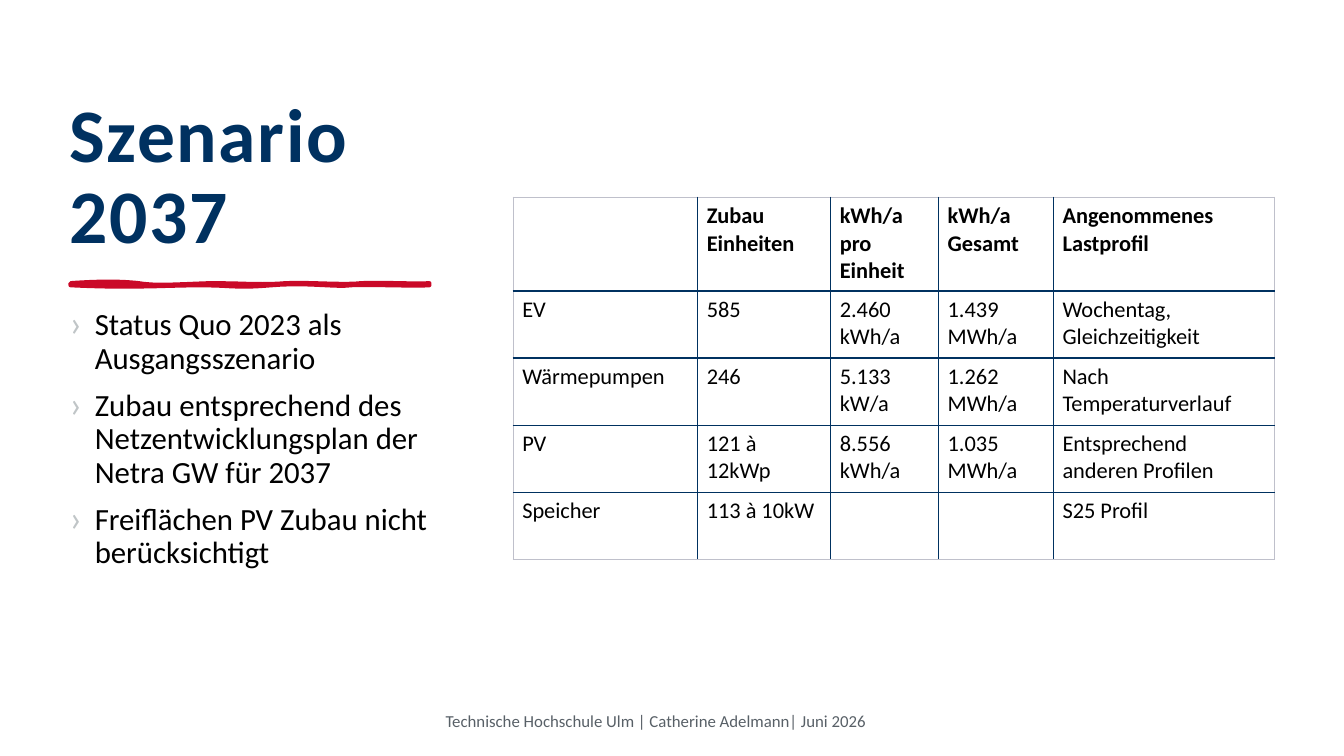
from dataclasses import dataclass

from lxml.etree import SubElement
from pptx import Presentation
from pptx.dml.color import RGBColor
from pptx.enum.text import MSO_ANCHOR, MSO_AUTO_SIZE, PP_ALIGN
from pptx.oxml.ns import qn
from pptx.util import Inches, Pt

WIDE, HIGH = Inches(13.33), Inches(7.5)
FONT = "Calibri"
COLORS = {
    "navy": "003160",
    "red": "CA0928",
    "black": "000000",
    "gray": "586067",
    "pale": "C0C5C7",
    "frame": "BFC0CB",
}


@dataclass(frozen=True)
class Box:
    left: float
    top: float
    width: float
    height: float

    def place(self) -> tuple[int, int, int, int]:
        return across(self.left), down(self.top), across(self.width), down(self.height)


@dataclass(frozen=True)
class Style:
    size: int
    color: str
    bold: bool = False


@dataclass(frozen=True)
class Curve:
    first: tuple[int, int]
    second: tuple[int, int]
    end: tuple[int, int]

    def point(self, start: tuple[int, int], t: float) -> tuple[float, float]:
        u = 1 - t
        x, y = (
            u**3 * a + 3 * u * u * t * b + 3 * u * t * t * c + t**3 * d
            for a, b, c, d in zip(start, self.first, self.second, self.end)
        )
        return x, y


TITLE = Style(54, "navy", True)
BODY = Style(22, "black")
FOOT = Style(12, "gray")
HEAD = Style(16, "black", True)
CELL = Style(16, "black")

TITLE_BOX = Box(5.18, 9.33, 28.13, 25.07)
STROKE_BOX = Box(5.25, 37.47, 26.7, 0.27)
BODY_BOX = Box(5.18, 40.93, 28.13, 49.73)
FOOT_BOX = Box(33.15, 92.67, 33.75, 5.33)
TABLE_BOX = Box(38.18, 26.1, 56.63, 47.87)

STROKE = [
    Curve((8, -100), (14, -100), (19, 0)),
    Curve((24, 150), (30, 50), (39, 0)),
    Curve((48, 0), (53, 100), (60, 0)),
    Curve((67, -50), (76, 100), (81, 0)),
    Curve((87, -50), (96, 50), (100, 0)),
    Curve((100, 50), (100, 100), (100, 100)),
    Curve((95, 150), (83, 50), (78, 100)),
    Curve((74, 200), (66, -50), (56, 100)),
    Curve((46, 250), (45, 100), (36, 100)),
    Curve((27, 100), (17, 250), (0, 100)),
]
STEPS = 12

POINTS = [
    "Status Quo 2023 als Ausgangsszenario",
    "Zubau entsprechend des Netzentwicklungsplan der Netra GW für 2037",
    "Freiflächen PV Zubau nicht berücksichtigt",
]
COLS = [13.73, 9.9, 8.03, 8.55, 16.42]
ROWS = [12.4] + [8.87] * 4
DATA = [
    ["", "Zubau\nEinheiten", "kWh/a\npro Einheit", "kWh/a\nGesamt", "Angenommenes Lastprofil"],
    ["EV", "585", "2.460 kWh/a", "1.439 MWh/a", "Wochentag, Gleichzeitigkeit"],
    ["Wärmepumpen", "246", "5.133 kW/a", "1.262 MWh/a", "Nach Temperaturverlauf"],
    ["PV", "121 à 12kWp", "8.556 kWh/a", "1.035 MWh/a", "Entsprechend anderen Profilen"],
    ["Speicher", "113 à 10kW", "", "", "S25 Profil"],
]


def across(share: float) -> int:
    return round(WIDE * share / 100)


def down(share: float) -> int:
    return round(HIGH * share / 100)


def tint(name: str) -> RGBColor:
    return RGBColor.from_string(COLORS[name])


def write(para, text: str, style: Style):
    run = para.add_run()
    run.text = text
    run.font.name = FONT
    run.font.size = Pt(style.size)
    run.font.bold = style.bold
    run.font.color.rgb = tint(style.color)
    return run


def fill_text(frame, lines: list[str], style: Style) -> None:
    for i, line in enumerate(lines):
        para = frame.add_paragraph() if i else frame.paragraphs[0]
        write(para, line, style)


def set_frame(frame, anchor: MSO_ANCHOR) -> None:
    frame.word_wrap = True
    frame.auto_size = MSO_AUTO_SIZE.NONE
    frame.vertical_anchor = anchor
    frame.margin_left = frame.margin_right = 0
    frame.margin_top = frame.margin_bottom = 0


def add_text(slide, box: Box, anchor: MSO_ANCHOR, lines: list[str], style: Style):
    frame = slide.shapes.add_textbox(*box.place()).text_frame
    set_frame(frame, anchor)
    fill_text(frame, lines, style)
    return frame


def add_title(slide) -> None:
    title = slide.shapes.title
    title.left, title.top, title.width, title.height = TITLE_BOX.place()
    set_frame(title.text_frame, MSO_ANCHOR.BOTTOM)
    para = title.text_frame.paragraphs[0]
    para.alignment = PP_ALIGN.LEFT
    para.line_spacing = 0.9
    run = write(para, "Szenario 2037", TITLE)
    run.font._element.set("spc", "120")


def add_stroke(slide) -> None:
    left, top, width, height = STROKE_BOX.place()
    start, spots = (0, 0), []
    for curve in STROKE:
        for step in range(1, STEPS + 1):
            x, y = curve.point(start, step / STEPS)
            spots.append((round(left + width * x / 100), round(top + height * y / 100)))
        start = curve.end
    pen = slide.shapes.build_freeform(left, top)
    pen.add_line_segments(spots, close=True)
    shape = pen.convert_to_shape()
    shape.shadow.inherit = False
    shape.fill.solid()
    shape.fill.fore_color.rgb = tint("red")
    shape.line.color.rgb = tint("red")
    shape.line.width = Pt(3)
    SubElement(shape.line._get_or_add_ln(), qn("a:round"))


def add_points(slide) -> None:
    frame = add_text(slide, BODY_BOX, MSO_ANCHOR.TOP, POINTS, BODY)
    for i, para in enumerate(frame.paragraphs):
        para.line_spacing = 0.9
        para.space_before = Pt(10 if i else 0)
        props = para._p.get_or_add_pPr()
        props.set("marL", str(Inches(0.25)))
        props.set("indent", str(-Inches(0.25)))
        paint = SubElement(props, qn("a:buClr"))
        SubElement(paint, qn("a:srgbClr"), val=COLORS["pale"])
        SubElement(props, qn("a:buSzPct"), val="120000")
        SubElement(props, qn("a:buFont"), typeface=FONT)
        SubElement(props, qn("a:buChar"), char="›")


def add_edge(cell, side: str, color: str) -> None:
    props = cell._tc.get_or_add_tcPr()
    edge = SubElement(props, qn(f"a:ln{side}"), w=str(Pt(1)))
    paint = SubElement(edge, qn("a:solidFill"))
    SubElement(paint, qn("a:srgbClr"), val=COLORS[color])


def add_grid(slide) -> None:
    table = slide.shapes.add_table(len(ROWS), len(COLS), *TABLE_BOX.place()).table
    table.first_row = table.horz_banding = False
    for col, share in zip(table.columns, COLS):
        col.width = across(share)
    for row, share in zip(table.rows, ROWS):
        row.height = down(share)
    for r, line in enumerate(DATA):
        for c, text in enumerate(line):
            cell = table.cell(r, c)
            cell.margin_left = cell.margin_right = across(0.68)
            cell.margin_top = cell.margin_bottom = down(0.67)
            outer = {"L": c == 0, "R": c == len(COLS) - 1, "T": r == 0, "B": r == len(ROWS) - 1}
            for side, rim in outer.items():
                add_edge(cell, side, "frame" if rim else "navy")
            cell.fill.background()
            if text:
                fill_text(cell.text_frame, text.split("\n"), CELL if r else HEAD)


def main() -> None:
    deck = Presentation()
    deck.slide_width, deck.slide_height = WIDE, HIGH
    slide = deck.slides.add_slide(deck.slide_layouts[5])
    add_title(slide)
    add_stroke(slide)
    add_points(slide)
    foot = ["Technische Hochschule Ulm | Catherine Adelmann| Juni 2026"]
    frame = add_text(slide, FOOT_BOX, MSO_ANCHOR.MIDDLE, foot, FOOT)
    frame.paragraphs[0].space_after = Pt(6)
    add_grid(slide)
    deck.save("out.pptx")


if __name__ == "__main__":
    main()
